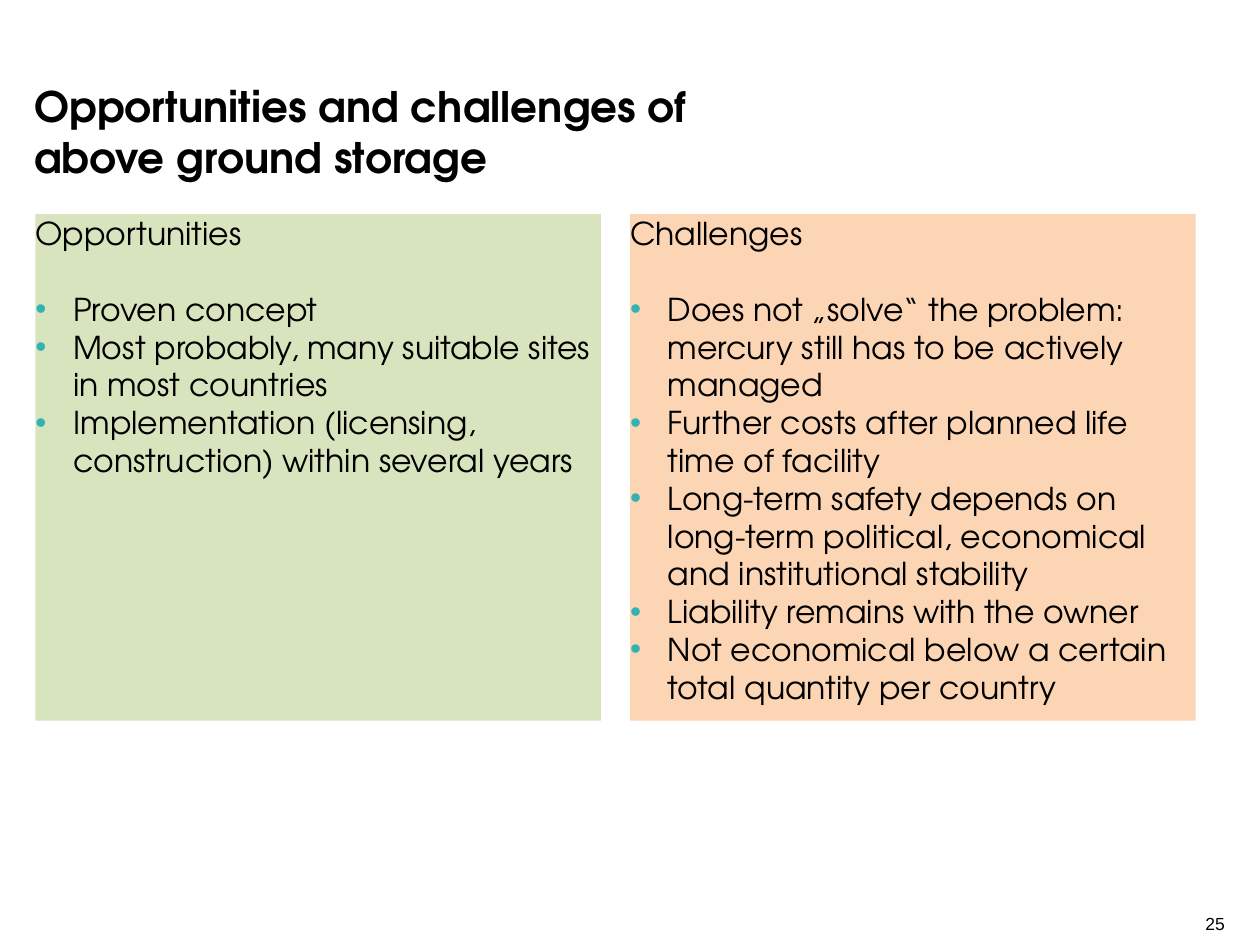
from lxml.etree import SubElement
from pptx import Presentation
from pptx.dml.color import RGBColor
from pptx.enum.shapes import MSO_SHAPE
from pptx.enum.text import MSO_ANCHOR, PP_ALIGN
from pptx.oxml.ns import qn
from pptx.util import Inches, Pt

COLORS = {"text": "000000", "bullet": "33B2B2", "green": "D7E4BD", "orange": "FCD5B5"}
TITLE = ["Opportunities and challenges of", "above ground storage"]
PANELS = [
    ("Opportunities", "green", [
        "Proven concept",
        "Most probably, many suitable sites in most countries",
        "Implementation (licensing, construction) within several years",
    ]),
    ("Challenges", "orange", [
        "Does not „solve“ the problem: mercury still has to be actively managed",
        "Further costs after planned life time of facility",
        "Long-term safety depends on long-term political, economical "
        "and institutional stability",
        "Liability remains with the owner",
        "Not economical below a certain total quantity per country",
    ]),
]


class Deck:
    face = "TeX Gyre Adventor"
    indent = Inches(0.3)

    def __init__(self, slide):
        self.slide = slide

    def frame(self, shape):
        """Remove the margins, wrap the text and start it at the top."""
        frame = shape.text_frame
        frame.margin_left = frame.margin_right = 0
        frame.margin_top = frame.margin_bottom = 0
        frame.word_wrap = True
        frame.vertical_anchor = MSO_ANCHOR.TOP
        return frame

    def run(self, para, text, size, face=None, bold=False):
        run = para.add_run()
        run.text = text
        font = run.font
        font.name = face or self.face
        font.size = Pt(size)
        font.bold = bold
        font.color.rgb = RGBColor.from_string(COLORS["text"])

    def bullet(self, para):
        props = para._p.get_or_add_pPr()
        props.set("marL", str(self.indent))
        props.set("indent", str(-self.indent))
        color = SubElement(props, qn("a:buClr"))
        SubElement(color, qn("a:srgbClr"), val=COLORS["bullet"])
        SubElement(props, qn("a:buFont"), typeface="Arial")
        SubElement(props, qn("a:buChar"), char="•")

    def title(self, lines, *box):
        shape = self.slide.shapes.add_textbox(*map(Inches, box))
        para = self.frame(shape).paragraphs[0]
        for i, line in enumerate(lines):
            if i:
                para.add_line_break()
            self.run(para, line, 24, bold=True)

    def panel(self, head, fill, items, *box):
        shape = self.slide.shapes.add_shape(MSO_SHAPE.RECTANGLE, *map(Inches, box))
        shape.shadow.inherit = False
        shape.fill.solid()
        shape.fill.fore_color.rgb = RGBColor.from_string(COLORS[fill])
        shape.line.fill.background()
        frame = self.frame(shape)
        para = frame.paragraphs[0]
        para.alignment = PP_ALIGN.LEFT
        para.space_after = Pt(21.6)
        self.run(para, head, 18)
        for item in items:
            para = frame.add_paragraph()
            para.alignment = PP_ALIGN.LEFT
            self.bullet(para)
            self.run(para, item, 18)

    def number(self, text, *box):
        shape = self.slide.shapes.add_textbox(*map(Inches, box))
        para = self.frame(shape).paragraphs[0]
        para.alignment = PP_ALIGN.RIGHT
        self.run(para, text, 10, face="Arial")


def main():
    show = Presentation()
    show.slide_width = Inches(10)
    show.slide_height = Inches(7.5)
    deck = Deck(show.slides.add_slide(show.slide_layouts[6]))
    deck.title(TITLE, 0.27, 0.64, 8.38, 0.66)
    for i, (head, fill, items) in enumerate(PANELS):
        deck.panel(head, fill, items, 0.28 + 4.72 * i, 1.7, 4.49, 4.02)
    deck.number("25", 9.03, 7.25, 0.69, 0.2)
    show.save("out.pptx")


if __name__ == "__main__":
    main()
